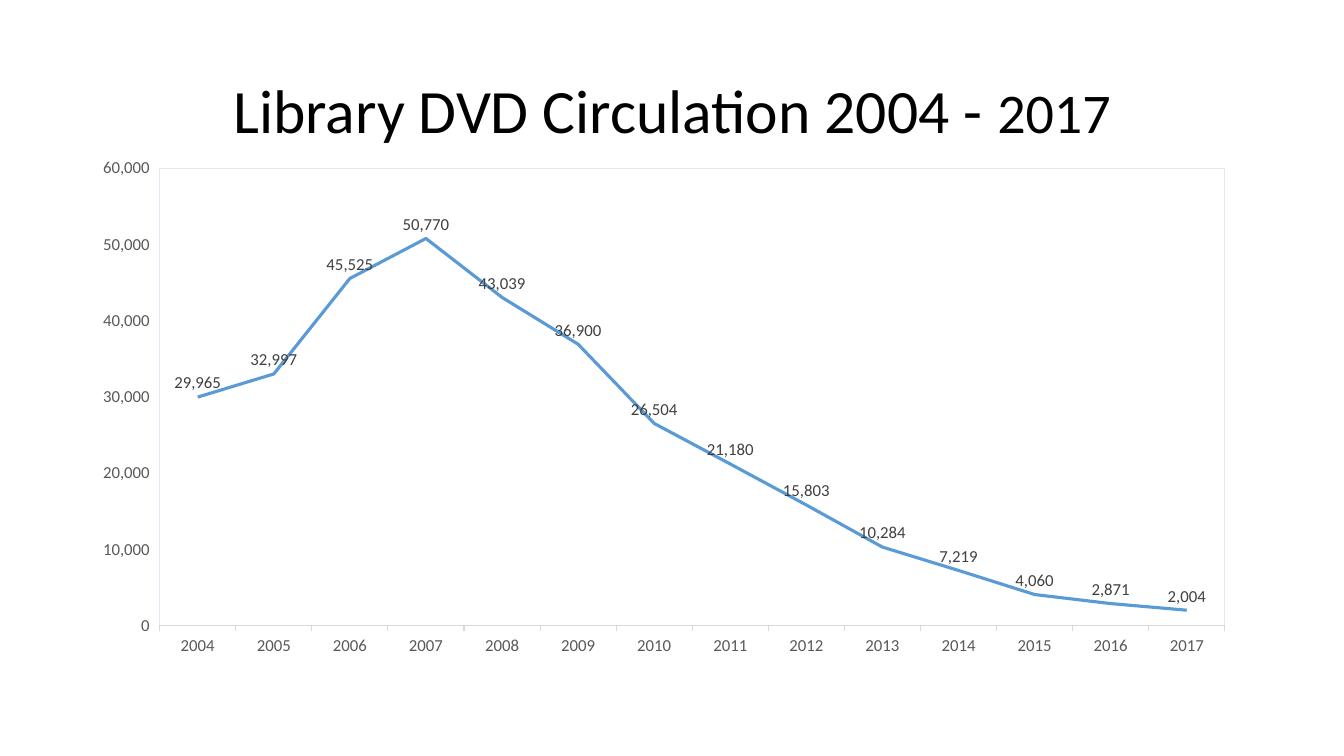
"""Build a slide with a line chart of yearly DVD circulation."""
from lxml.etree import fromstring
from pptx import Presentation
from pptx.chart.data import CategoryChartData
from pptx.dml.color import RGBColor
from pptx.enum.chart import XL_CHART_TYPE, XL_LABEL_POSITION, XL_TICK_MARK
from pptx.enum.text import MSO_ANCHOR, MSO_AUTO_SIZE, PP_ALIGN
from pptx.oxml.ns import nsdecls, qn
from pptx.util import Cm, Pt

FONT = "Calibri"
BLACK = RGBColor(0x00, 0x00, 0x00)
BLUE = RGBColor(0x5B, 0x9B, 0xD5)
AXIS_GREY = RGBColor(0x59, 0x59, 0x59)
LABEL_GREY = RGBColor(0x40, 0x40, 0x40)
LINE_GREY = RGBColor(0xD9, 0xD9, 0xD9)
FRAME_BLUE = RGBColor(0xDE, 0xEB, 0xF7)

TITLE = [("Library DVD Circulation 2004 - ", 44), ("2017", 40)]
YEARS = [str(year) for year in range(2004, 2018)]
LOANS = [29965, 32997, 45525, 50770, 43039, 36900, 26504,
         21180, 15803, 10284, 7219, 4060, 2871, 2004]
PLOT_AREA = {"x": 0.058, "y": 0.033, "w": 0.919, "h": 0.888}


def style_font(font, size, color):
    font.name = FONT
    font.size = Pt(size)
    font.bold = False
    font.color.rgb = color


def fill_title(title):
    title.left, title.top = Cm(2.33), Cm(1.02)
    title.width, title.height = Cm(29.21), Cm(3.68)
    frame = title.text_frame
    frame.auto_size = MSO_AUTO_SIZE.NONE
    frame.word_wrap = True
    frame.vertical_anchor = MSO_ANCHOR.MIDDLE
    heading = frame.paragraphs[0]
    heading.alignment = PP_ALIGN.CENTER
    heading.line_spacing = 0.9
    for words, size in TITLE:
        run = heading.add_run()
        run.text = words
        style_font(run.font, size, BLACK)


def style_axis(axis):
    axis.has_major_gridlines = False
    axis.major_tick_mark = XL_TICK_MARK.OUTSIDE
    axis.minor_tick_mark = XL_TICK_MARK.NONE
    style_font(axis.tick_labels.font, 12, AXIS_GREY)


def frame_plot(chart):
    plot_area = chart._chartSpace.find(".//" + qn("c:plotArea"))
    for layout in plot_area.findall(qn("c:layout")):
        plot_area.remove(layout)
    sizes = "".join(f'<c:{side} val="{share}"/>' for side, share in PLOT_AREA.items())
    plot_area.insert(0, fromstring(
        f'<c:layout {nsdecls("c")}><c:manualLayout><c:layoutTarget val="inner"/>'
        f'<c:xMode val="edge"/><c:yMode val="edge"/>{sizes}'
        '</c:manualLayout></c:layout>'))
    plot_area.append(fromstring(
        f'<c:spPr {nsdecls("c", "a")}><a:noFill/><a:ln w="9525"><a:solidFill>'
        f'<a:srgbClr val="{FRAME_BLUE}"/></a:solidFill></a:ln></c:spPr>'))


def add_circulation_chart(slide):
    circulation = CategoryChartData(number_format="#,##0")
    circulation.categories = YEARS
    circulation.add_series("Series 1", LOANS)
    chart = slide.shapes.add_chart(
        XL_CHART_TYPE.LINE, Cm(2.33), Cm(3.81), Cm(29.21), Cm(12.98), circulation).chart
    style_font(chart.font, 10, BLACK)
    chart.has_title = False
    chart.has_legend = False

    style_axis(chart.category_axis)
    chart.category_axis.format.line.color.rgb = LINE_GREY
    chart.category_axis.format.line.width = Pt(0.75)
    loans_axis = chart.value_axis
    style_axis(loans_axis)
    loans_axis.format.line.fill.background()
    loans_axis.minimum_scale, loans_axis.maximum_scale = 0, 60000
    loans_axis.major_unit = 10000
    loans_axis.tick_labels.number_format = "#,##0"
    loans_axis.tick_labels.number_format_is_linked = False

    chart.plots[0].vary_by_categories = False
    loans = chart.plots[0].series[0]
    loans.smooth = False
    loans.format.line.color.rgb = BLUE
    loans.format.line.width = Pt(2.25)
    labels = loans.data_labels
    labels.show_value = True
    labels.position = XL_LABEL_POSITION.ABOVE
    labels.number_format = "#,##0"
    labels.number_format_is_linked = False
    style_font(labels.font, 12, LABEL_GREY)
    frame_plot(chart)


def main():
    deck = Presentation()
    deck.slide_width, deck.slide_height = Cm(33.87), Cm(19.05)
    slide = deck.slides.add_slide(deck.slide_layouts[5])
    fill_title(slide.shapes.title)
    add_circulation_chart(slide)
    deck.save("out.pptx")


if __name__ == "__main__":
    main()
